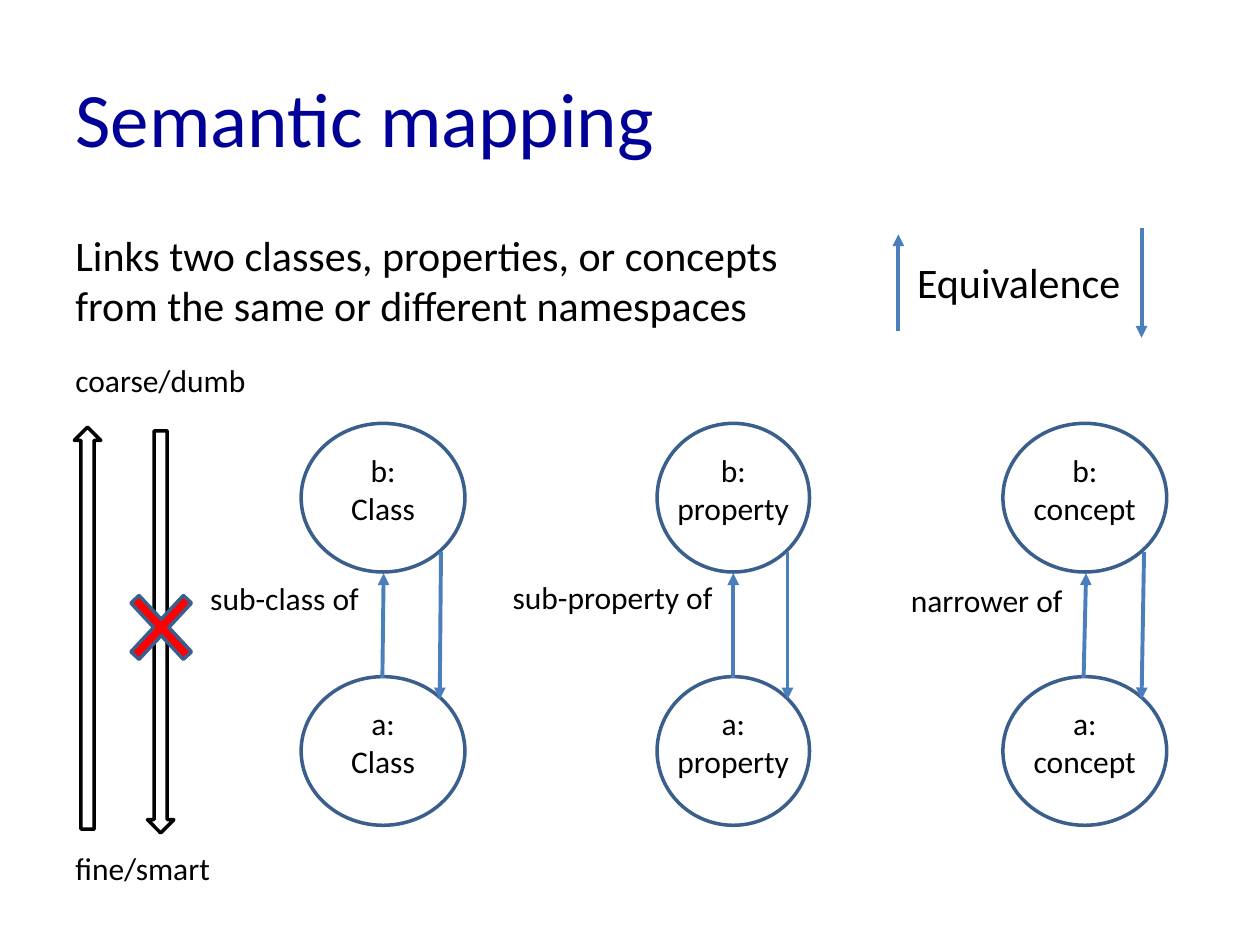
from lxml.etree import SubElement
from pptx import Presentation
from pptx.dml.color import RGBColor
from pptx.enum.shapes import MSO_CONNECTOR, MSO_SHAPE
from pptx.enum.text import MSO_ANCHOR, MSO_AUTO_SIZE, PP_ALIGN
from pptx.oxml.ns import qn
from pptx.util import Inches, Pt

THEME = {
    "font": "Calibri", "head": 44, "lead": 24, "label": 18,
    "navy": "000099", "ink": "000000", "paper": "FFFFFF",
    "edge": "3A5F8C", "arrow": "4B7EBC", "cross": "FF0000",
}
TITLE = "Semantic mapping"
LEAD = ["Links two classes, properties, or concepts",
        "from the same or different namespaces"]
PAIRS = [
    {"name": "Class", "mid": 3.04, "wide": 1.3, "down": 3.5, "lean": 0.01,
     "link": "sub-class of", "at": (1.57, 4.55, 1.39, 0.4)},
    {"name": "property", "mid": 5.82, "wide": 1.21, "down": 6.25, "lean": 0,
     "link": "sub-property of", "at": (3.97, 4.54, 1.81, 0.4)},
    {"name": "concept", "mid": 8.61, "wide": 1.3, "down": 9.08, "lean": 0.02,
     "link": "narrower of", "at": (7.13, 4.56, 1.42, 0.4)},
]
ROWS = [("a:", 5.37), ("b:", 3.36)]
TALL = 1.18
SCALE = [("coarse/dumb", (0.5, 2.82, 1.57, 0.4)),
         ("fine/smart", (0.5, 6.69, 1.28, 0.4))]
SIGNS = [(MSO_SHAPE.UP_ARROW, (0.59, 3.39, 0.21, 3.19)),
         (MSO_SHAPE.DOWN_ARROW, (1.17, 3.42, 0.21, 3.19))]
EQUAL = [(9.06, 1.81, 9.06, 2.68), (7.13, 2.63, 7.13, 1.86)]


def color(key):
    return RGBColor.from_string(THEME[key])


def inch(box):
    return [Inches(n) for n in box]


def write(frame, lines, size="label", ink="ink", align=PP_ALIGN.LEFT):
    for i, line in enumerate(lines):
        para = frame.paragraphs[0] if i == 0 else frame.add_paragraph()
        para.text = line
        para.alignment = align
        para.font.name = THEME["font"]
        para.font.size = Pt(THEME[size])
        para.font.color.rgb = color(ink)


def label(slide, box, lines, **style):
    frame = slide.shapes.add_textbox(*inch(box)).text_frame
    frame.word_wrap = False
    frame.auto_size = MSO_AUTO_SIZE.SHAPE_TO_FIT_TEXT
    write(frame, lines, **style)


def draw(slide, kind, box, fill=None, edge="edge"):
    shape = slide.shapes.add_shape(kind, *inch(box))
    shape.shadow.inherit = False
    if fill:
        shape.fill.solid()
        shape.fill.fore_color.rgb = color(fill)
    else:
        shape.fill.background()
    shape.line.color.rgb = color(edge)
    shape.line.width = Pt(2)
    return shape


def arrow(slide, ends):
    link = slide.shapes.add_connector(MSO_CONNECTOR.STRAIGHT, *inch(ends))
    link.line.color.rgb = color("arrow")
    link.line.width = Pt(2.25)
    SubElement(link.line._get_or_add_ln(), qn("a:tailEnd"), type="triangle")
    SubElement(link._element.spPr, qn("a:effectLst"))


def main():
    deck = Presentation()
    deck.slide_width, deck.slide_height = inch((10, 7.5))
    slide = deck.slides.add_slide(deck.slide_layouts[5])
    title = slide.shapes.title
    title.left, title.top, title.width, title.height = inch((0.5, 0.3, 9, 1.25))
    title.text_frame.vertical_anchor = MSO_ANCHOR.MIDDLE
    write(title.text_frame, [TITLE], size="head", ink="navy")
    label(slide, (0.5, 1.77, 5.83, 0.91), LEAD, size="lead")
    label(slide, (7.18, 1.99, 1.83, 0.5), ["Equivalence"], size="lead")
    for ends in EQUAL:
        arrow(slide, ends)

    for pair in PAIRS:
        mid, wide, lean = pair["mid"], pair["wide"], pair["lean"]
        for mark, top in ROWS:
            draw(slide, MSO_SHAPE.OVAL, (mid - wide / 2, top, wide, TALL))
            label(slide, (mid - 0.65, top + 0.17, 1.3, 0.84),
                  [mark, pair["name"]], align=PP_ALIGN.CENTER)
        arrow(slide, (mid - lean / 2, 5.38, mid + lean / 2, 4.55))
        arrow(slide, (pair["down"], 4.38, pair["down"] - lean, 5.55))
        label(slide, pair["at"], [pair["link"]])

    for text, box in SCALE:
        label(slide, box, [text])
    for kind, box in SIGNS:
        draw(slide, kind, box, fill="paper", edge="ink")
    cross = draw(slide, MSO_SHAPE.MATH_MULTIPLY, (0.88, 4.55, 0.8, 0.86), fill="cross")
    cross.adjustments[0] = 0.11
    deck.save("out.pptx")


if __name__ == "__main__":
    main()
